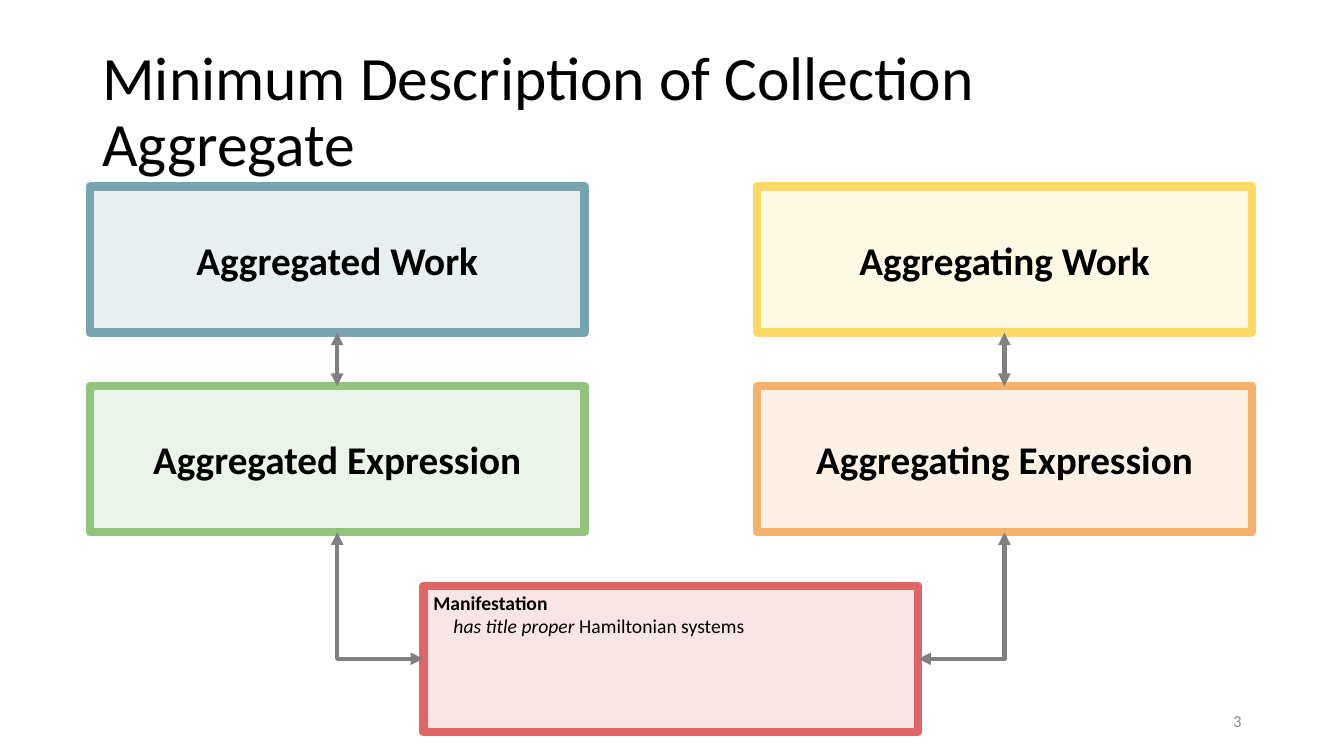
from lxml import etree
from pptx import Presentation
from pptx.dml.color import RGBColor
from pptx.enum.shapes import MSO_CONNECTOR, MSO_SHAPE
from pptx.enum.text import MSO_ANCHOR, PP_ALIGN
from pptx.oxml.ns import qn
from pptx.util import Pt

RECTANGLE = MSO_SHAPE.RECTANGLE
STRAIGHT, ELBOW = MSO_CONNECTOR.STRAIGHT, MSO_CONNECTOR.ELBOW
TOP, MIDDLE = MSO_ANCHOR.TOP, MSO_ANCHOR.MIDDLE
LEFT, CENTER, RIGHT = PP_ALIGN.LEFT, PP_ALIGN.CENTER, PP_ALIGN.RIGHT
TOP_SIDE, LEFT_SIDE, BOTTOM_SIDE, RIGHT_SIDE = range(4)

FONT = "Calibri"
COLORS = {
    "text": "000000",
    "page_number": "8C8C8C",
    "arrow": "808080",
    "blue": "76A5AF", "blue_fill": "D0E0E3",
    "yellow": "FFD966", "yellow_fill": "FFF2CC",
    "green": "93C47D", "green_fill": "D9EAD3",
    "orange": "F6B26B", "orange_fill": "FCE5CD",
    "red": "E06666", "red_fill": "F4CCCC",
}
BOX_WIDTH, BOX_HEIGHT = 353.5, 104.4
FIRST_LEFT, FIRST_TOP = 64.1, 133.2
COLUMN_STEP, ROW_STEP = 238.3, 142.6


def rgb(name):
    return RGBColor.from_string(COLORS[name])


def style_paragraph(paragraph, size, color="text", bold=None, align=LEFT):
    paragraph.alignment = align
    paragraph.font.name = FONT
    paragraph.font.size = Pt(size)
    paragraph.font.bold = bold
    paragraph.font.color.rgb = rgb(color)


def add_text(slide, text, left, top, width, height, size, color="text", align=LEFT):
    shape = slide.shapes.add_textbox(Pt(left), Pt(top), Pt(width), Pt(height))
    frame = shape.text_frame
    frame.word_wrap = True
    frame.vertical_anchor = MIDDLE
    paragraph = frame.paragraphs[0]
    paragraph.text = text
    style_paragraph(paragraph, size, color, align=align)
    return frame


def add_box(slide, column, row, color):
    shape = slide.shapes.add_shape(
        RECTANGLE,
        Pt(FIRST_LEFT + column * COLUMN_STEP), Pt(FIRST_TOP + row * ROW_STEP),
        Pt(BOX_WIDTH), Pt(BOX_HEIGHT))
    shape.shadow.inherit = False
    shape.fill.solid()
    shape.fill.fore_color.rgb = rgb(color + "_fill")
    fill_color = shape.fill._xPr.find(".//" + qn("a:srgbClr"))
    etree.SubElement(fill_color, qn("a:alpha")).set("val", "50000")
    shape.line.color.rgb = rgb(color)
    shape.line.width = Pt(6)
    return shape


def add_entity(slide, text, column, row, color):
    shape = add_box(slide, column, row, color)
    shape.text_frame.vertical_anchor = MIDDLE
    paragraph = shape.text_frame.paragraphs[0]
    paragraph.text = text
    style_paragraph(paragraph, 28, bold=True, align=CENTER)
    return shape


def add_manifestation(slide):
    shape = add_box(slide, 1, 2, "red")
    frame = shape.text_frame
    frame.vertical_anchor = TOP
    heading = frame.paragraphs[0]
    heading.text = "Manifestation"
    style_paragraph(heading, 14, bold=True)
    statement = frame.add_paragraph()
    style_paragraph(statement, 14)
    statement._p.get_or_add_pPr().set("marL", str(Pt(14.4)))
    for text, italic in (("has title proper ", True), ("Hamiltonian systems", False)):
        run = statement.add_run()
        run.text = text
        run.font.italic = italic
    return shape


def add_arrow(slide, kind, start, start_side, end, end_side):
    connector = slide.shapes.add_connector(kind, 0, 0, 0, 0)
    connector.begin_connect(start, start_side)
    connector.end_connect(end, end_side)
    connector.line.color.rgb = rgb("arrow")
    connector.line.width = Pt(3)
    properties = connector._element.spPr
    if kind == ELBOW:
        properties.find(qn("a:prstGeom")).set("prst", "bentConnector2")
    line = properties.find(qn("a:ln"))
    for tag in ("a:headEnd", "a:tailEnd"):
        etree.SubElement(line, qn(tag)).set("type", "triangle")
    etree.SubElement(properties, qn("a:effectLst"))


def main():
    presentation = Presentation()
    presentation.slide_width, presentation.slide_height = Pt(960), Pt(540)
    slide = presentation.slides.add_slide(presentation.slide_layouts[6])

    title = add_text(slide, "Minimum Description of Collection Aggregate",
                     66, 28.8, 828, 104.4, 44)
    title.margin_right = Pt(20)
    title.paragraphs[0].line_spacing = 0.9
    add_text(slide, "3", 678, 500.5, 216, 28.8, 12, "page_number", RIGHT)

    aggregated_work = add_entity(slide, "Aggregated Work", 0, 0, "blue")
    aggregating_work = add_entity(slide, "Aggregating Work", 2, 0, "yellow")
    aggregated_expression = add_entity(slide, "Aggregated Expression", 0, 1, "green")
    aggregating_expression = add_entity(slide, "Aggregating Expression", 2, 1, "orange")
    manifestation = add_manifestation(slide)

    for work, expression, side in (
            (aggregated_work, aggregated_expression, LEFT_SIDE),
            (aggregating_work, aggregating_expression, RIGHT_SIDE)):
        add_arrow(slide, ELBOW, manifestation, side, expression, BOTTOM_SIDE)
        add_arrow(slide, STRAIGHT, work, BOTTOM_SIDE, expression, TOP_SIDE)

    presentation.save("out.pptx")


if __name__ == "__main__":
    main()
